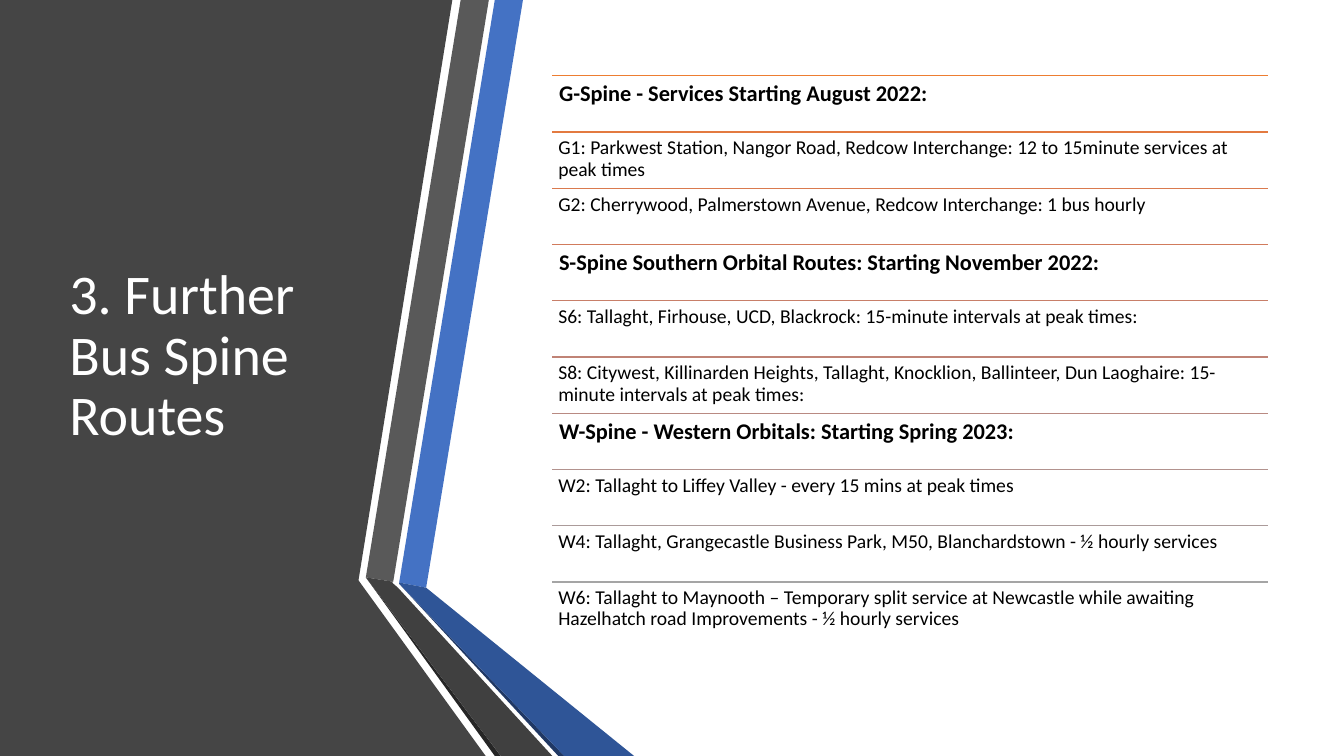
from lxml.etree import SubElement as Sub
from pptx import Presentation
from pptx.dml.color import RGBColor as RGB
from pptx.enum.shapes import MSO_CONNECTOR as Conn
from pptx.enum.text import MSO_ANCHOR as Anchor
from pptx.oxml.ns import qn
from pptx.util import Cm, Pt

WIDE, HIGH = 33.87, 19.05
COLORS = {
    "panel": "454545", "blue": "4472C4", "grey": "595959", "black": "262626",
    "navy": "203864", "deep": "2F5597", "dark": "404040",
    "white": "FFFFFF", "text": "000000",
}

# Side panel, then the folded bands, as corner points in cm
PANEL = [(0, 0), (11.4, 0), (9.04, 14.6), (9.04, 14.63), (12.24, HIGH), (0, HIGH)]
BANDS = [
    ("blue", [(10.06, 14.68), (10.74, 14.81), (13.18, 0), (12.47, 0)]),
    ("grey", [(12.32, 0), (11.61, 0), (9.22, 14.55), (9.91, 14.66)]),
    ("black", [(9.22, 14.55), (12.47, HIGH), (12.62, HIGH)]),
    ("navy", [(10.06, 14.71), (14.07, HIGH), (14.22, HIGH)]),
    ("deep", [(10.06, 14.71), (14.22, HIGH), (15.98, HIGH), (10.74, 14.81),
              (10.06, 14.68)]),
    ("dark", [(13.92, HIGH), (10.03, 14.81), (9.88, 14.68), (9.91, 14.66),
              (9.22, 14.55), (12.62, HIGH)]),
]

# Rule colour, heading or not, wording
ROWS = [
    ("ED7D31", True, "G-Spine - Services Starting August 2022:"),
    ("E37A40", False, "G1: Parkwest Station, Nangor Road, Redcow Interchange: "
                      "12 to 15minute services at peak times"),
    ("DA7A4E", False, "G2: Cherrywood, Palmerstown Avenue, Redcow Interchange: "
                      "1 bus hourly"),
    ("D17B5C", True, "S-Spine Southern Orbital Routes: Starting November 2022:"),
    ("C87F69", False, "S6: Tallaght, Firhouse, UCD, Blackrock: "
                      "15-minute intervals at peak times:"),
    ("C08376", False, "S8: Citywest, Killinarden Heights, Tallaght, Knocklion, "
                      "Ballinteer, Dun Laoghaire: 15-minute intervals at peak times:"),
    ("B98A82", True, "W-Spine - Western Orbitals: Starting Spring 2023:"),
    ("B2928E", False, "W2: Tallaght to Liffey Valley - every 15 mins at peak times"),
    ("AB9B9A", False, "W4: Tallaght, Grangecastle Business Park, M50, "
                      "Blanchardstown - ½ hourly services"),
    ("A5A5A5", False, "W6: Tallaght to Maynooth – Temporary split service at "
                      "Newcastle while awaiting Hazelhatch road Improvements - "
                      "½ hourly services"),
]


class Deck:
    font = "Calibri"

    def __init__(self):
        self.prs = Presentation()
        self.prs.slide_width, self.prs.slide_height = Cm(WIDE), Cm(HIGH)
        self.slide = self.prs.slides.add_slide(self.prs.slide_layouts[6])
        self.shapes = self.slide.shapes

    def group(self):
        """Send the next elements into a new group."""
        self.shapes = self.slide.shapes.add_group_shape().shapes

    def outline(self, points, color):
        first, *rest = [(Cm(x), Cm(y)) for x, y in points]
        pen = self.shapes.build_freeform(*first)
        pen.add_line_segments(rest, close=True)
        shape = pen.convert_to_shape()
        shape.shadow.inherit = False
        shape.fill.solid()
        shape.fill.fore_color.rgb = RGB.from_string(COLORS[color])
        shape.line.fill.background()

    def rule(self, left, top, width, color):
        line = self.shapes.add_connector(
            Conn.STRAIGHT, Cm(left), Cm(top), Cm(left + width), Cm(top))
        line.line.color.rgb = RGB.from_string(color)
        line.line.width = Pt(1)
        Sub(line._element.spPr, qn("a:effectLst"))

    def text(self, words, left, top, width, height, size, color="text",
             bold=False, pad=None, anchor=Anchor.TOP, after=6):
        box = self.shapes.add_textbox(Cm(left), Cm(top), Cm(width), Cm(height))
        frame = box.text_frame
        frame.word_wrap = True
        frame.vertical_anchor = anchor
        if pad is not None:
            frame.margin_left = frame.margin_right = Cm(pad)
            frame.margin_top = frame.margin_bottom = Cm(pad)
        frame.text = words
        para = frame.paragraphs[0]
        para.line_spacing = 0.9
        para.space_after = Pt(after)
        font = para.runs[0].font
        font.name, font.size, font.bold = self.font, Pt(size), bold
        font.color.rgb = RGB.from_string(COLORS[color])


def main():
    deck = Deck()

    # Panel and bands
    deck.outline(PANEL, "panel")
    deck.group()
    for color, points in BANDS:
        deck.outline(points, color)

    # Title
    deck.shapes = deck.slide.shapes
    top, tall = 1.91, 14.17
    deck.text("3. Further Bus Spine Routes", 1.5, top, 7.72, tall, 40,
              color="white", anchor=Anchor.MIDDLE)

    # Route list, rows of equal height
    deck.group()
    left, width, step = 13.92, 18.03, tall / len(ROWS)
    for i, (color, head, words) in enumerate(ROWS):
        y = top + i * step
        deck.rule(left, y, width, color)
        deck.text(words, left, y, width, step, 16 if head else 14, bold=head,
                  pad=0.17 if head else 0.15, after=5)

    deck.prs.save("out.pptx")


if __name__ == "__main__":
    main()
